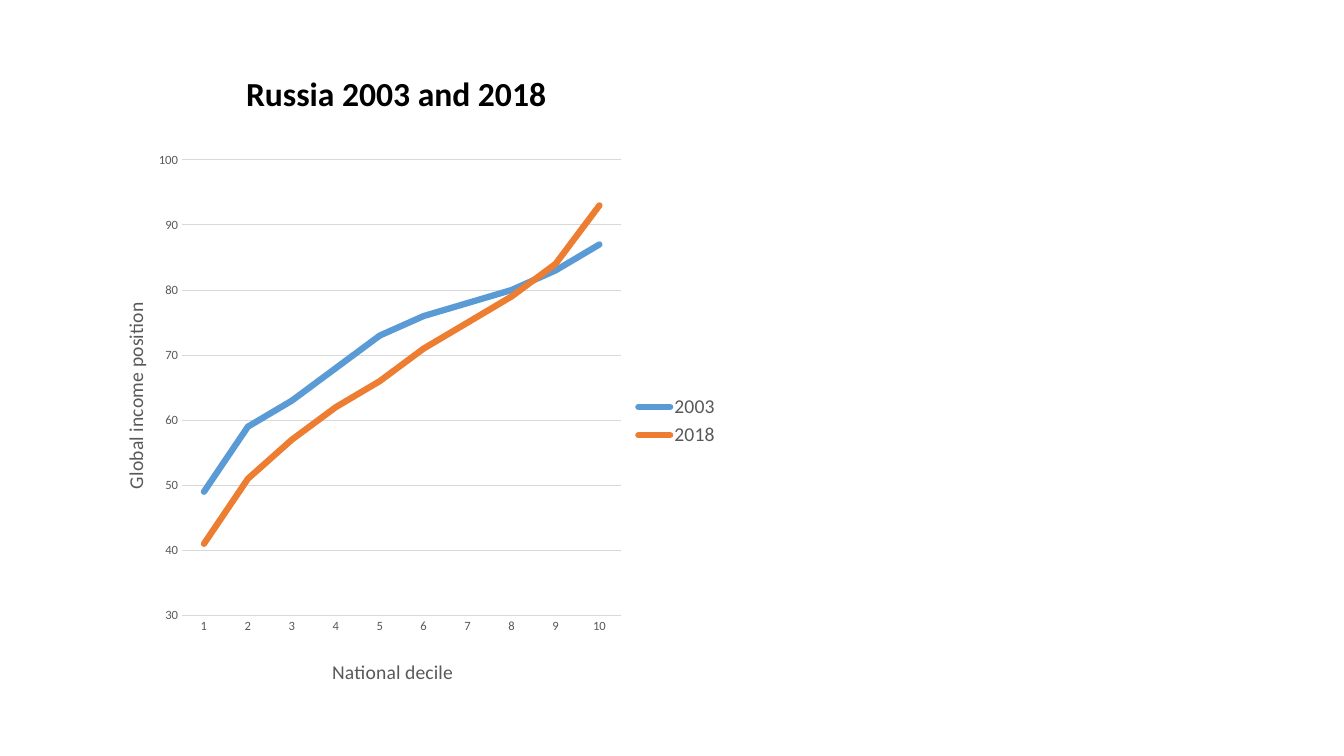
"""Build a slide with a line chart of Russian income deciles in 2003 and 2018."""
from lxml.etree import SubElement
from pptx import Presentation
from pptx.chart.data import CategoryChartData
from pptx.dml.color import RGBColor
from pptx.enum.chart import XL_CHART_TYPE as ChartType
from pptx.enum.chart import XL_LEGEND_POSITION as LegendPosition
from pptx.enum.chart import XL_TICK_MARK as TickMark
from pptx.enum.text import MSO_ANCHOR as Anchor
from pptx.enum.text import PP_ALIGN as Align
from pptx.oxml.ns import qn
from pptx.util import Cm, Pt

COLORS = {"black": "000000", "label": "595959", "grid": "D9D9D9",
          "2003": "5B9BD5", "2018": "ED7D31"}
INCOME_POSITIONS = {
    "2003": (49, 59, 63, 68, 73, 76, 78, 80, 83, 87),
    "2018": (41, 51, 57, 62, 66, 71, 75, 79, 84, 93),
}


def style_font(font, size, color="label", bold=False):
    font.name = "Calibri"
    font.size = Pt(size)
    font.bold = bold
    font.color.rgb = RGBColor.from_string(COLORS[color])


def style_line(line, color, width):
    line.color.rgb = RGBColor.from_string(COLORS[color])
    line.width = Pt(width)


def write_text(frame, text, align=Align.CENTER, spacing=None, before=None, **font):
    para = frame.paragraphs[0]
    para.alignment = align
    para.line_spacing = spacing
    para.space_before = before
    span = para.add_run()
    span.text = text
    style_font(span.font, **font)


def place(element, index, **fractions):
    for old in element.findall(qn("c:layout")):
        element.remove(old)
    layout = SubElement(element, qn("c:layout"))
    manual = SubElement(layout, qn("c:manualLayout"))
    if "w" in fractions:
        SubElement(manual, qn("c:layoutTarget")).set("val", "inner")
    for name in ("xMode", "yMode"):
        SubElement(manual, qn(f"c:{name}")).set("val", "edge")
    for name, value in fractions.items():
        SubElement(manual, qn(f"c:{name}")).set("val", str(value))
    element.insert(index, layout)


def style_axis(axis, title, x, y):
    axis.major_tick_mark = axis.minor_tick_mark = TickMark.NONE
    style_font(axis.tick_labels.font, 9)
    write_text(axis.axis_title.text_frame, title, size=14)
    place(axis.axis_title.element, 1, x=x, y=y)


def add_heading(page, text):
    box = page.shapes.add_textbox(Cm(2.82), Cm(0.71), Cm(14.33), Cm(2.29))
    frame = box.text_frame
    frame.word_wrap = True
    frame.vertical_anchor = Anchor.BOTTOM
    write_text(frame, text, spacing=0.9, before=Pt(10),
               size=24, color="black", bold=True)


def add_income_chart(page):
    data = CategoryChartData()
    data.categories = [str(decile) for decile in range(1, 11)]
    for year, positions in INCOME_POSITIONS.items():
        data.add_series(year, positions)
    chart = page.shapes.add_chart(ChartType.LINE, Cm(2.34), Cm(3.61),
                                  Cm(16.05), Cm(14), data).chart
    style_font(chart.font, 10, "black")
    chart.has_title = False
    chart.has_legend = True
    chart.legend.position = LegendPosition.RIGHT
    chart.legend.include_in_layout = False
    style_font(chart.legend.font, 14)

    style_axis(chart.category_axis, "National decile", x=0.37, y=0.92)
    style_line(chart.category_axis.format.line, "grid", 0.75)
    values = chart.value_axis
    style_axis(values, "Global income position", x=0.04, y=0.28)
    values.minimum_scale, values.maximum_scale, values.major_unit = 30, 100, 10
    values.format.line.fill.background()
    style_line(values.major_gridlines.format.line, "grid", 0.75)

    plot = chart.plots[0]
    plot.vary_by_categories = False
    for series in plot.series:
        series.smooth = False
        style_line(series.format.line, series.name, 4.5)
        series.format.line._get_or_add_ln().set("cap", "rnd")
    plot_area = chart.element.find(f".//{qn('c:plotArea')}")
    place(plot_area, 0, x=0.14, y=0.03, w=0.69, h=0.82)


def main():
    deck = Presentation()
    deck.slide_width, deck.slide_height = Cm(33.87), Cm(19.05)
    page = deck.slides.add_slide(deck.slide_layouts[6])
    add_heading(page, "Russia 2003 and 2018")
    add_income_chart(page)
    deck.save("out.pptx")


if __name__ == "__main__":
    main()
